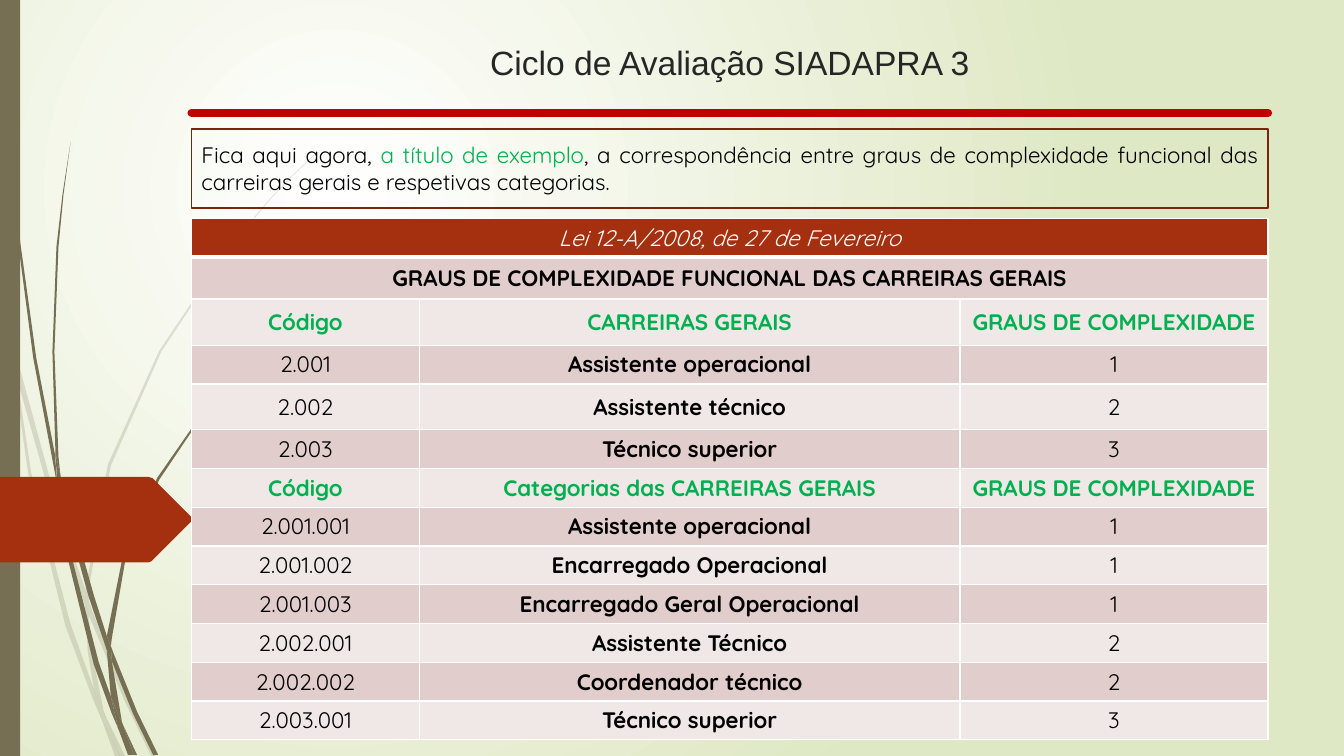
from lxml.etree import SubElement
from pptx import Presentation
from pptx.dml.color import RGBColor
from pptx.enum.shapes import MSO_CONNECTOR, MSO_SHAPE
from pptx.enum.text import MSO_ANCHOR, PP_ALIGN
from pptx.oxml.ns import qn
from pptx.util import Pt

OLIVE, RUST, GREEN, BLACK, WHITE = "766F54", "A53010", "00B050", "000000", "FFFFFF"
BANDS = ["E1CDCC", "F0E8E7"]
LEFT, WIDTH = 136.8, 769
GRID = 0.72  # points per unit of the outline coordinates

# Outlines of the grass blades and of the arrow tab
PALE_BLADES = [
    [(11, 350), (9, 322), (0, 282), (0, 299), (10, 344)],
    [(58, 522), (84, 599), (85, 586), (62, 520), (14, 345), (17, 376)],
    [(92, 607), (88, 596), (88, 610), (123, 694), (150, 750), (155, 750), (127, 692)],
    [(119, 750), (124, 750), (105, 711)],
    [(93, 683), (70, 619), (31, 469), (17, 376), (11, 350), (28, 470), (65, 621),
     (92, 693), (101, 714), (99, 707)],
    [(84, 599), (87, 646), (93, 683), (96, 692), (105, 711), (103, 706), (91, 646),
     (88, 610), (88, 608)],
    [(88, 584), (110, 462), (160, 349), (229, 245), (268, 198), (290, 175), (312, 154),
     (312, 153), (289, 175), (268, 197), (228, 244), (158, 348), (107, 461), (85, 584),
     (85, 586), (88, 596)],
    [(101, 714), (114, 750), (119, 750)],
    [(88, 608), (88, 610), (88, 596), (85, 586), (84, 599)],
    [(96, 692), (93, 683), (99, 707), (101, 714), (119, 750), (105, 711)],
]
DARK_BLADES = [
    [(7, 110), (17, 233), (33, 355), (56, 477), (57, 481), (55, 457), (55, 453), (36, 355),
     (19, 232), (8, 109), (5, 48), (4, 0), (3, 0), (4, 48)],
    [(88, 592), (106, 645), (106, 633), (106, 631), (93, 590), (60, 472), (64, 505)],
    [(113, 649), (110, 641), (111, 656), (132, 708), (152, 749), (157, 749), (136, 706)],
    [(110, 691), (98, 657), (72, 556), (64, 505), (57, 477), (68, 557), (93, 659),
     (111, 708), (117, 722), (116, 717)],
    [(60, 472), (58, 453), (54, 349), (58, 245), (63, 193), (70, 141), (62, 193),
     (56, 245), (52, 349), (55, 449)],
    [(133, 749), (136, 749), (122, 719)],
    [(57, 477), (64, 505), (60, 472), (55, 449), (55, 453)],
    [(111, 633), (125, 552), (158, 476), (205, 406), (231, 374), (245, 359), (261, 344),
     (260, 344), (245, 358), (231, 373), (204, 405), (156, 474), (122, 551), (106, 631),
     (110, 641)],
    [(117, 722), (127, 749), (131, 749)],
    [(106, 645), (110, 691), (116, 706), (122, 719), (121, 716), (111, 656), (109, 651)],
    [(106, 645), (109, 651), (111, 656), (110, 641), (106, 631), (106, 633)],
    [(116, 706), (110, 691), (116, 717), (117, 722), (130, 749), (133, 749), (122, 719)],
]
ARROW_TAB = [(0, 473), (147, 473), (150, 474), (151, 474), (190, 513), (190.5, 515),
             (190, 517), (151, 556), (150, 557), (147, 558), (0, 558)]

# Table contents
CAREERS = [
    ("Código", "CARREIRAS GERAIS", "GRAUS DE COMPLEXIDADE"),
    ("2.001", "Assistente operacional", "1"),
    ("2.002", "Assistente técnico", "2"),
    ("2.003", "Técnico superior", "3"),
    ("Código", "Categorias das CARREIRAS GERAIS", "GRAUS DE COMPLEXIDADE"),
    ("2.001.001", "Assistente operacional", "1"),
    ("2.001.002", "Encarregado Operacional", "1"),
    ("2.001.003", "Encarregado Geral Operacional", "1"),
    ("2.002.001", "Assistente Técnico", "2"),
    ("2.002.002", "Coordenador técnico", "2"),
    ("2.003.001", "Técnico superior", "3"),
]
COLUMN_WIDTHS = [162.7, 386.3, 220]
ROW_HEIGHTS = [27.2, 30.2, 33, 27.7, 32.6] + [27.7] * 8


def color(value):
    return RGBColor.from_string(value)


class SlideBuilder:
    def __init__(self, slide):
        self.slide = slide
        self.shapes = slide.shapes
        self.body_font = "Quicksand"
        self.body_size = 16

    def background(self, inner, outer):
        fill = self.slide.background.fill
        fill.gradient()
        for stop, value in zip(fill.gradient_stops, (inner, outer)):
            stop.color.rgb = color(value)
        gradient = next(self.slide.element.iter(qn("a:gradFill")))
        gradient.remove(gradient.find(qn("a:lin")))
        circle = SubElement(gradient, qn("a:path"), {"path": "circle"})
        SubElement(circle, qn("a:fillToRect"), l="50000", t="50000", r="100000", b="100000")

    def paint(self, shape, fill):
        shape.shadow.inherit = False
        shape.line.fill.background()
        shape.fill.solid()
        shape.fill.fore_color.rgb = color(fill)

    def outline(self, points, fill, opacity=100):
        builder = self.shapes.build_freeform(*points[0], scale=Pt(GRID))
        builder.add_line_segments(points[1:], close=True)
        shape = builder.convert_to_shape()
        self.paint(shape, fill)
        if opacity < 100:
            solid = next(shape.element.iter(qn("a:srgbClr")))
            SubElement(solid, qn("a:alpha"), val=str(opacity * 1000))

    def bar(self, left, top, width, height, fill):
        position = map(Pt, (left, top, width, height))
        self.paint(self.shapes.add_shape(MSO_SHAPE.RECTANGLE, *position), fill)

    def rule(self, left, right, y, value, weight):
        connector = self.shapes.add_connector(MSO_CONNECTOR.STRAIGHT, *map(Pt, (left, y, right, y)))
        connector.line.color.rgb = color(value)
        connector.line.width = Pt(weight)
        next(connector.element.iter(qn("a:ln"))).set("cap", "rnd")
        SubElement(connector.element.spPr, qn("a:effectLst"))

    def add_text(self, frame, runs, align, size=None, font=None, bold=False, italic=False):
        paragraph = frame.paragraphs[0]
        paragraph.alignment = align
        paragraph.font.name = font or self.body_font
        paragraph.font.size = Pt(size or self.body_size)
        paragraph.font.bold, paragraph.font.italic = bold, italic
        for text, value in runs:
            run = paragraph.add_run()
            run.text = text
            run.font.color.rgb = color(value)

    def title(self, left, top, width, height, text):
        box = self.shapes.add_textbox(*map(Pt, (left, top, width, height)))
        box.text_frame.word_wrap = True
        box.text_frame.vertical_anchor = MSO_ANCHOR.BOTTOM
        self.add_text(box.text_frame, [(text, "262626")], PP_ALIGN.CENTER, 24, "Arial")

    def framed_text(self, left, top, width, height, runs, border):
        position = map(Pt, (left, top, width, height))
        shape = self.shapes.add_shape(MSO_SHAPE.RECTANGLE, *position)
        shape.shadow.inherit = False
        shape.fill.background()
        shape.line.color.rgb = color(border)
        shape.line.width = Pt(1.25)
        shape.text_frame.vertical_anchor = MSO_ANCHOR.MIDDLE
        self.add_text(shape.text_frame, runs, PP_ALIGN.JUSTIFY)

    def table(self, left, top, widths, heights):
        position = map(Pt, (left, top, sum(widths), sum(heights)))
        table = self.shapes.add_table(len(heights), len(widths), *position).table
        for column, width in zip(table.columns, widths):
            column.width = Pt(width)
        for row, height in zip(table.rows, heights):
            row.height = Pt(height)
        return table

    def cell(self, cell, text, fill, value, bold=False, italic=False, bottom=1):
        properties = cell._tc.get_or_add_tcPr()
        for side, weight in zip("LRTB", (1, 1, 1, bottom)):
            border = SubElement(properties, qn("a:ln" + side), w=str(Pt(weight)))
            SubElement(SubElement(border, qn("a:solidFill")), qn("a:srgbClr"), val=WHITE)
        cell.fill.solid()
        cell.fill.fore_color.rgb = color(fill)
        cell.vertical_anchor = MSO_ANCHOR.MIDDLE
        if text:
            self.add_text(cell.text_frame, [(text, value)], PP_ALIGN.CENTER, bold=bold, italic=italic)


def main():
    presentation = Presentation()
    presentation.slide_width, presentation.slide_height = Pt(960), Pt(540)
    builder = SlideBuilder(presentation.slides.add_slide(presentation.slide_layouts[6]))

    # Backdrop
    builder.background(WHITE, "DFE8C4")
    for blade in PALE_BLADES:
        builder.outline(blade, OLIVE, opacity=20)
    for blade in DARK_BLADES:
        builder.outline(blade, OLIVE)
    builder.bar(0, 0, 14.4, 540, OLIVE)
    builder.outline(ARROW_TAB, RUST)

    # Heading
    builder.title(LEFT, 23.8, WIDTH, 38.2, "Ciclo de Avaliação SIADAPRA 3")
    builder.rule(LEFT, LEFT + WIDTH, 80.6, "C00000", 5.75)

    # Table: two merged heading rows, then the careers
    table = builder.table(LEFT, 156.2, COLUMN_WIDTHS, ROW_HEIGHTS)
    for row in (0, 1):
        table.cell(row, 0).merge(table.cell(row, 2))
    law = ("Lei 12-A/2008, de 27 de Fevereiro", "", "")
    degrees = ("GRAUS DE COMPLEXIDADE FUNCIONAL DAS CARREIRAS GERAIS", "", "")
    for column in range(3):
        builder.cell(table.cell(0, column), law[column], RUST, WHITE, italic=True, bottom=3)
    for row, texts in enumerate([degrees] + CAREERS):
        heading = texts[0] == "Código"
        for column, text in enumerate(texts):
            bold = heading or row == 0 or column == 1
            builder.cell(table.cell(row + 1, column), text, BANDS[row % 2],
                         GREEN if heading else BLACK, bold)

    # Introduction
    builder.framed_text(LEFT, 92.2, WIDTH, 56.2, [
        ("Fica aqui agora, ", BLACK),
        ("a título de exemplo", GREEN),
        (", a correspondência entre graus de complexidade funcional das carreiras gerais "
         "e respetivas categorias.", BLACK),
    ], "7A240C")
    presentation.save("out.pptx")


if __name__ == "__main__":
    main()
